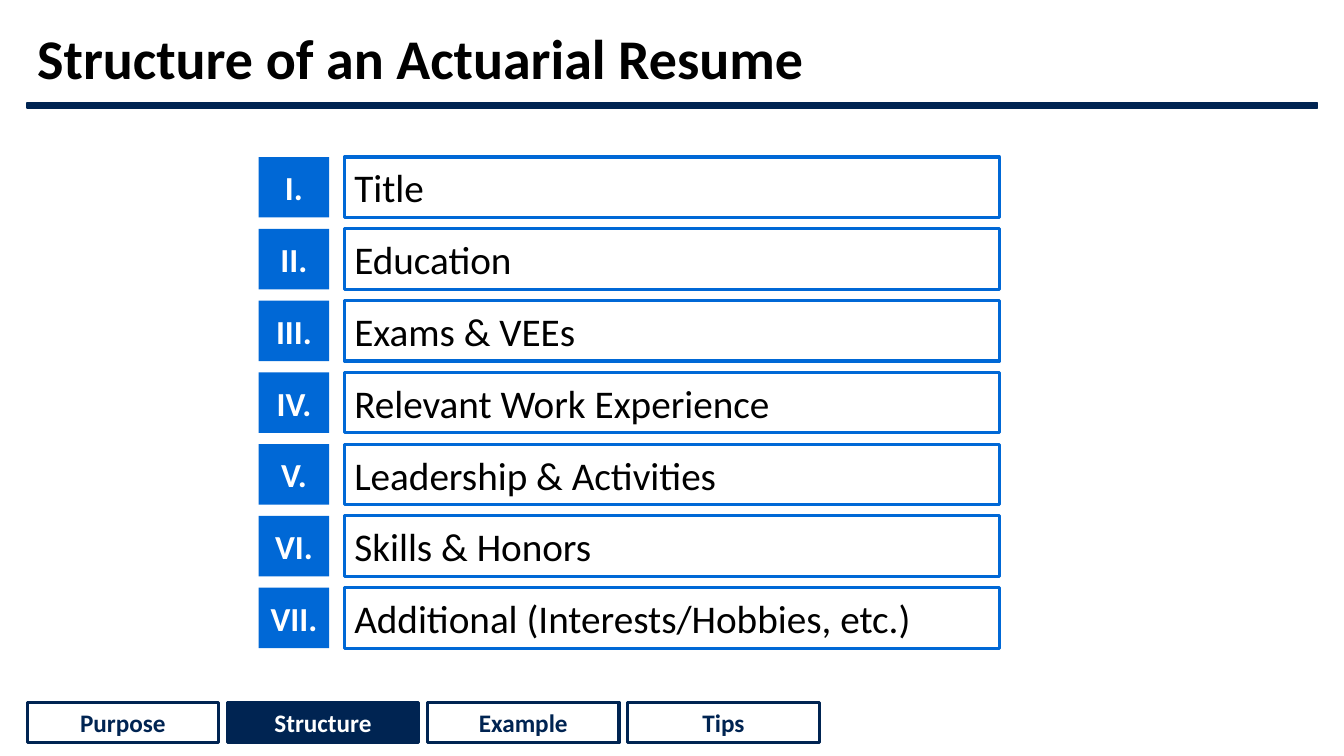
from dataclasses import dataclass

import pptx
import pptx.dml.color
import pptx.enum.shapes
import pptx.enum.text
import pptx.util

Pt = pptx.util.Pt
ALIGN = pptx.enum.text.PP_ALIGN
MIDDLE = pptx.enum.text.MSO_ANCHOR.MIDDLE


@dataclass(frozen=True)
class Theme:
    font: str = "Calibri"
    navy: str = "002452"
    blue: str = "0068D6"
    white: str = "FFFFFF"
    black: str = "000000"
    title_size: float = 40
    section_size: float = 28
    numeral_size: float = 24
    tab_size: float = 18
    border: float = 2.25


THEME = Theme()

SECTIONS = [
    ("I.", "Title"),
    ("II.", "Education"),
    ("III.", "Exams & VEEs"),
    ("IV.", "Relevant Work Experience"),
    ("V.", "Leadership & Activities"),
    ("VI.", "Skills & Honors"),
    ("VII.", "Additional (Interests/Hobbies, etc.)"),
]
TABS = ["Purpose", "Structure", "Example", "Tips"]
CURRENT_TAB = "Structure"


def rgb(color):
    return pptx.dml.color.RGBColor.from_string(color)


def write(shape, text, size, color, bold=True, align=ALIGN.CENTER):
    frame = shape.text_frame
    frame.text = text
    frame.word_wrap = True
    frame.vertical_anchor = MIDDLE
    paragraph = frame.paragraphs[0]
    paragraph.alignment = align
    font = paragraph.runs[0].font
    font.name, font.size, font.bold = THEME.font, Pt(size), bold
    font.color.rgb = rgb(color)


def add_box(slide, left, top, width, height, fill, border=None, weight=THEME.border):
    box = slide.shapes.add_shape(
        pptx.enum.shapes.MSO_SHAPE.RECTANGLE, Pt(left), Pt(top), Pt(width), Pt(height))
    box.shadow.inherit = False
    box.fill.solid()
    box.fill.fore_color.rgb = rgb(fill)
    if border:
        box.line.color.rgb = rgb(border)
        box.line.width = Pt(weight)
    else:
        box.line.fill.background()
    return box


def add_heading(slide, text, left, top, width, height):
    """Place the title with its rule along the bottom edge of the box."""
    rule_height = 3.6
    title_height = height - rule_height
    add_box(slide, left, top + title_height, width, rule_height,
            THEME.navy, THEME.navy, weight=1)
    title = slide.shapes.title
    title.left, title.top = Pt(left), Pt(top)
    title.width, title.height = Pt(width), Pt(title_height)
    write(title, text, THEME.title_size, THEME.black, align=ALIGN.LEFT)
    title.text_frame.paragraphs[0].line_spacing = 0.9


def add_sections(slide, sections, left, top, width, height):
    """Stack numbered rows evenly so that they fill the box."""
    numeral_width, gutter, row_height = 50.4, 10.8, 43.2
    pitch = (height - row_height) / (len(sections) - 1)
    label_left = left + numeral_width + gutter
    label_width = width - numeral_width - gutter
    for row, (numeral, section) in enumerate(sections):
        row_top = top + row * pitch
        numeral_box = add_box(slide, left, row_top, numeral_width, row_height, THEME.blue)
        write(numeral_box, numeral, THEME.numeral_size, THEME.white)
        section_box = add_box(slide, label_left, row_top, label_width, row_height,
                              THEME.white, THEME.blue)
        write(section_box, section, THEME.section_size, THEME.black,
              bold=False, align=ALIGN.LEFT)


def add_tabs(slide, tabs, current, left, top, width, height):
    """Split the box into equal tabs and fill the current one."""
    gap = 6.2
    tab_width = (width - gap * (len(tabs) - 1)) / len(tabs)
    for index, tab in enumerate(tabs):
        fill, ink = THEME.white, THEME.navy
        if tab == current:
            fill, ink = ink, fill
        tab_box = add_box(slide, left + index * (tab_width + gap), top,
                          tab_width, height, fill, THEME.navy)
        write(tab_box, tab, THEME.tab_size, ink)


def main():
    deck = pptx.Presentation()
    deck.slide_width, deck.slide_height = Pt(960), Pt(540)
    slide = deck.slides.add_slide(deck.slide_layouts[5])
    add_heading(slide, "Structure of an Actuarial Resume", 19.4, 13.7, 921.6, 63.4)
    add_tabs(slide, TABS, CURRENT_TAB, 19.4, 501.8, 565.8, 28.8)
    add_sections(slide, SECTIONS, 184.8, 112.2, 529.2, 350.8)
    deck.save("out.pptx")


if __name__ == "__main__":
    main()
